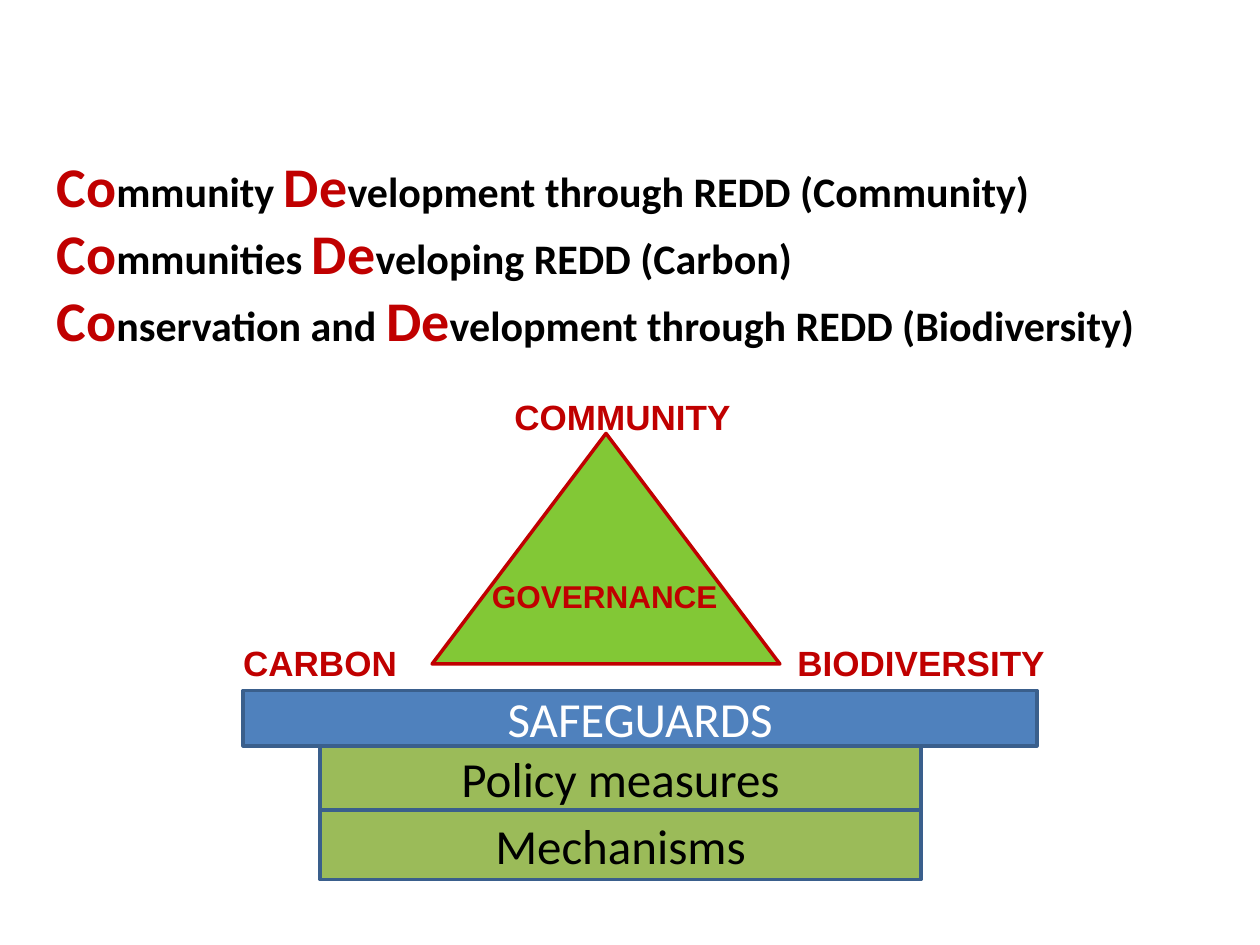
from dataclasses import dataclass

from pptx import Presentation
from pptx.dml.color import RGBColor
from pptx.enum.shapes import MSO_SHAPE as Shape
from pptx.enum.text import MSO_ANCHOR as Anchor, PP_ALIGN as Align
from pptx.util import Inches, Pt


@dataclass(frozen=True)
class Theme:
    red: str = "C00000"
    black: str = "000000"
    white: str = "FFFFFF"
    lime: str = "82C836"
    olive: str = "9BBB59"
    blue: str = "4F81BD"
    edge: str = "3A5F8C"
    body_font: str = "Calibri"
    label_font: str = "Arial"
    initial: int = 32
    body: int = 24
    bar: int = 28
    label: int = 20
    small_label: int = 18
    line: int = 2


T = Theme()

# Each meaning alternates between emphasised initials and plain text
MEANINGS = [
    ("Co", "mmunity ", "De", "velopment through REDD (Community)"),
    ("Co", "mmunities ", "De", "veloping REDD (Carbon)"),
    ("Co", "nservation and ", "De", "velopment through REDD (Biodiversity)"),
]

# Text, left, top, width, height, size
LABELS = [
    ("COMMUNITY", 3.62, 3.09, 2.64, 0.44, T.label),
    ("CARBON", 1.22, 5.04, 2.64, 0.44, T.label),
    ("BIODIVERSITY", 5.99, 5.04, 2.64, 0.44, T.label),
    ("GOVERNANCE", 3.58, 4.53, 2.44, 0.4, T.small_label),
]

# Text, left, top, width, height, fill, text colour
BARS = [
    ("Policy measures", 2.54, 5.92, 4.77, 0.51, T.olive, T.black),
    ("Mechanisms", 2.54, 6.43, 4.77, 0.55, T.olive, T.black),
    ("SAFEGUARDS", 1.93, 5.48, 6.3, 0.44, T.blue, T.white),
]


def set_font(font, size, color):
    font.size = Pt(size)
    font.color.rgb = RGBColor.from_string(color)


def add_text_frame(s, *box):
    tf = s.shapes.add_textbox(*map(Inches, box)).text_frame
    tf.word_wrap = True
    return tf


def add_meanings(s, *box):
    tf = add_text_frame(s, *box)
    for i, parts in enumerate(MEANINGS):
        p = tf.add_paragraph() if i else tf.paragraphs[0]
        p.font.name, p.font.bold = T.body_font, True
        for j, text in enumerate(parts):
            r = p.add_run()
            r.text = text
            r.font.name, r.font.bold = T.body_font, True
            if j % 2 == 0:
                set_font(r.font, T.initial, T.red)
            else:
                set_font(r.font, T.body, T.black)


def add_label(s, text, left, top, width, height, size):
    p = add_text_frame(s, left, top, width, height).paragraphs[0]
    p.text, p.alignment = text, Align.CENTER
    p.font.name, p.font.bold = T.label_font, True
    set_font(p.font, size, T.red)


def add_outlined(s, kind, box, fill, line):
    sp = s.shapes.add_shape(kind, *map(Inches, box))
    sp.shadow.inherit = False
    sp.fill.solid()
    sp.fill.fore_color.rgb = RGBColor.from_string(fill)
    sp.line.color.rgb = RGBColor.from_string(line)
    sp.line.width = Pt(T.line)
    return sp


def add_bar(s, text, left, top, width, height, fill, color):
    sp = add_outlined(s, Shape.RECTANGLE, (left, top, width, height), fill, T.edge)
    tf = sp.text_frame
    tf.word_wrap, tf.vertical_anchor = True, Anchor.MIDDLE
    p = tf.paragraphs[0]
    p.text, p.alignment = text, Align.CENTER
    p.font.name = T.body_font
    set_font(p.font, T.bar, color)


def main():
    prs = Presentation()
    prs.slide_width, prs.slide_height = Inches(10), Inches(7.5)
    s = prs.slides.add_slide(prs.slide_layouts[6])

    # Meanings of the name
    add_meanings(s, 0.35, 1.15, 9.07, 1.72)

    # Triangle with its labels
    add_outlined(s, Shape.ISOSCELES_TRIANGLE, (3.43, 3.44, 2.76, 1.83), T.lime, T.red)
    for label in LABELS:
        add_label(s, *label)

    # Supporting bars
    for bar in BARS:
        add_bar(s, *bar)

    prs.save("out.pptx")


if __name__ == "__main__":
    main()
